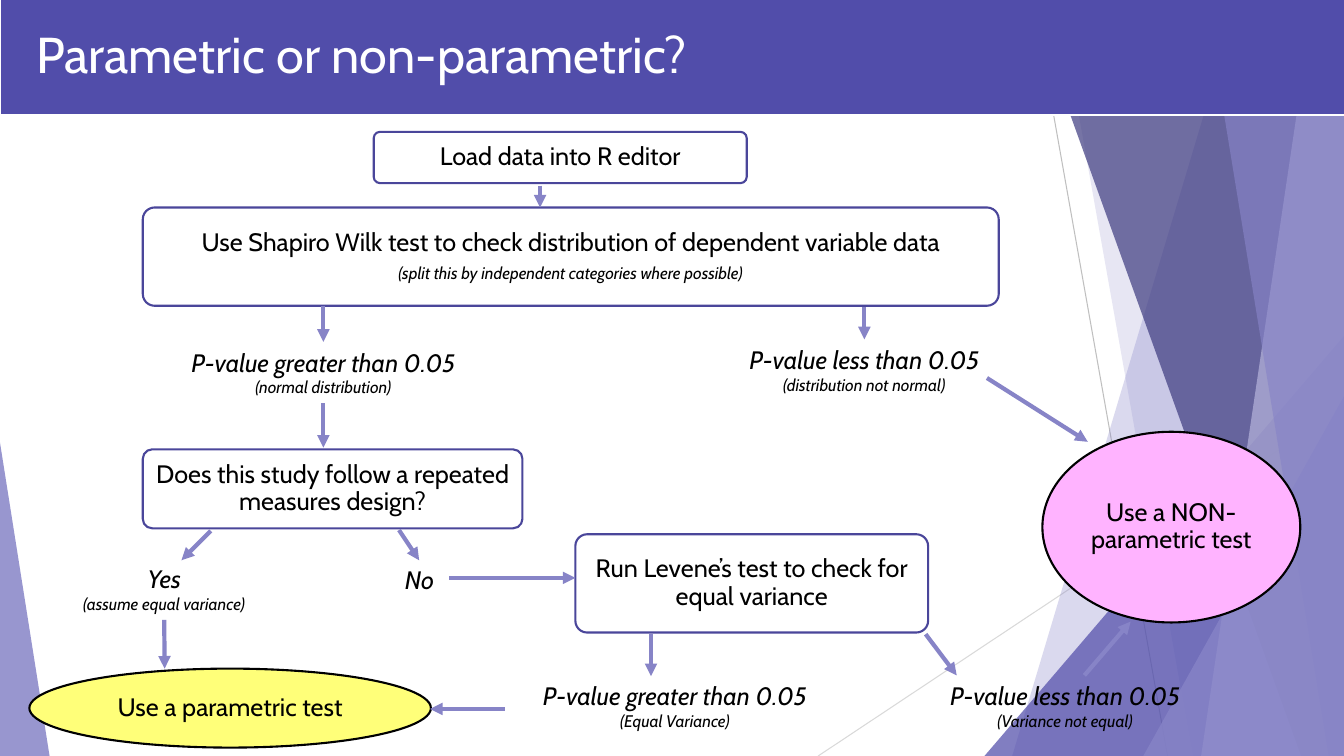
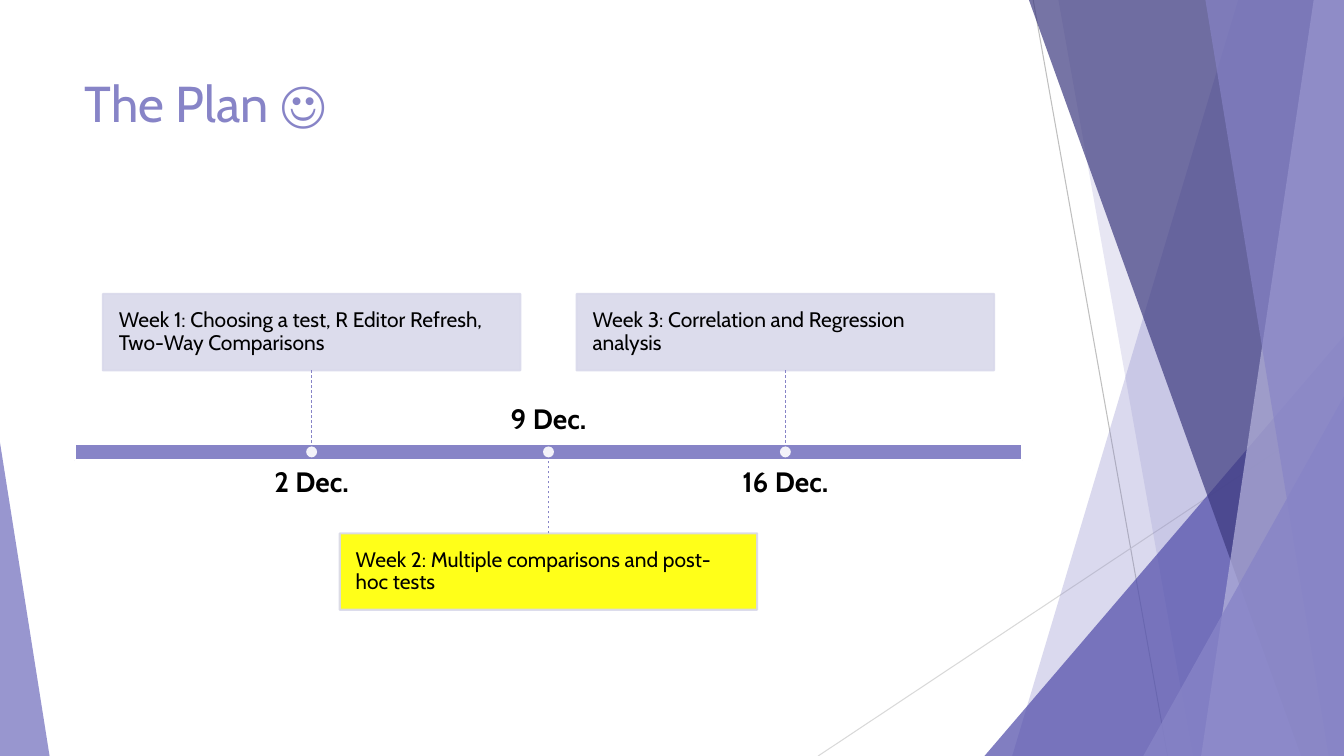
"""Builds a test-choosing flowchart slide and a three-week plan slide on a shared faceted backdrop."""

from dataclasses import dataclass
from typing import Any, NamedTuple, Optional, Sequence, Union

import lxml.etree
import pptx
import pptx.dml.color
import pptx.enum.dml
import pptx.enum.shapes
import pptx.enum.text
import pptx.oxml.ns
import pptx.util

COLUMNS, ROWS = 160, 90
CELL = pptx.util.Inches(1) // 12

LILAC, INDIGO, OUTLINE = "8784C7", "514DAA", "4A469A"
PALE, WHITE, BLACK = "D9D9EB", "FFFFFF", "000000"

SHAPES = pptx.enum.shapes.MSO_SHAPE
ANCHOR = pptx.enum.text.MSO_ANCHOR
ALIGN = pptx.enum.text.PP_ALIGN
DASH = pptx.enum.dml.MSO_LINE.DASH
TOP, BOTTOM = 0, 2

CENTRED = {"alignment": ALIGN.CENTER}
TIGHT = {"line_spacing": 0.9, "space_after": pptx.util.Pt(6)}
MARGINS = ("margin_left", "margin_top", "margin_right", "margin_bottom")


class Area(NamedTuple):
    left: float
    top: float
    width: float
    height: float


class Line(NamedTuple):
    text: str
    size: float
    colour: str = BLACK
    bold: bool = False
    italic: bool = False


@dataclass(frozen=True)
class Panel:
    top_column: float
    bottom_column: float
    colour: str
    opacity: int


@dataclass(frozen=True)
class Spike:
    left: float
    top: float
    width: float
    apex: float
    colour: str
    opacity: int


@dataclass(frozen=True)
class Step:
    area: Area
    lines: Sequence[Line]
    preset: Any = SHAPES.ROUNDED_RECTANGLE
    fill: str = WHITE
    outline: str = OUTLINE


@dataclass(frozen=True)
class Answer:
    area: Area
    text: str
    detail: str = ""


@dataclass(frozen=True)
class Arrow:
    start: tuple[float, float]
    end: tuple[float, float]
    leaves: Optional[str] = None
    reaches: Optional[str] = None


@dataclass(frozen=True)
class Week:
    date: str
    topic: str
    above: bool
    fill: str = PALE


FACETS: list[Union[Panel, Spike]] = [
    Panel(147.4, 120.5, LILAC, 30),
    Panel(126, 142, LILAC, 20),
    Spike(117.2, 40, 42.8, 1, INDIGO, 72),
    Panel(122.5, 154.9, "3D3A7F", 70),
    Panel(156.4, 143, "B7B5DD", 70),
    Panel(143.5, 158.2, LILAC, 65),
    Spike(136.1, 47.2, 23.9, 1, LILAC, 80),
    Spike(0, 52.7, 5.9, 0, LILAC, 85),
]

STEPS = [
    Step(Area(44.5, 15.7, 44.4, 6.1), [Line("Load data into R editor", 18)]),
    Step(Area(17, 24.7, 101.9, 11.7), [
        Line("Use Shapiro Wilk test to check distribution of dependent variable data", 18),
        Line("(split this by independent categories where possible)", 12, italic=True)]),
    Step(Area(17, 53.5, 45.2, 9.4), [Line("Does this study follow a repeated measures design?", 18)]),
    Step(Area(68.5, 63.6, 42, 11.7), [Line("Run Levene’s test to check for equal variance", 18)]),
    Step(Area(3.5, 79.6, 47.8, 9.4), [Line("Use a parametric test", 18)], SHAPES.OVAL, "FFFF79", BLACK),
    Step(Area(124.1, 51.4, 30.7, 22.7), [Line("Use a NON- parametric test", 18)], SHAPES.OVAL, "FFB3FF", BLACK),
]

ANSWERS = {
    "not normal": Answer(Area(83.5, 40.4, 38.8, 7.3), "P-value less than 0.05", "(distribution not normal)"),
    "normal": Answer(Area(17.5, 40.7, 42, 7.3), "P-value greater than 0.05", "(normal distribution)"),
    "unequal": Answer(Area(107.4, 80.4, 38.8, 7.3), "P-value less than 0.05", "(Variance not equal)"),
    "equal": Answer(Area(61.1, 80.4, 38.5, 7.3), "P-value greater than 0.05", "(Equal Variance)"),
    "yes": Answer(Area(6.7, 66.5, 25.7, 7.3), "Yes", "(assume equal variance)"),
    "no": Answer(Area(37.1, 66.6, 25.7, 4.8), "No"),
}

ARROWS = [
    Arrow((64.3, 22.1), (64.3, 24.7)),
    Arrow((38.5, 36.4), (38.5, 40.7), reaches="normal"),
    Arrow((102.9, 36.6), (102.9, 40.4), reaches="not normal"),
    Arrow((117.5, 45), (129.5, 52.6)),
    Arrow((38.5, 48), (38.5, 53.3), leaves="normal"),
    Arrow((19.6, 73.8), (19.6, 79.6), leaves="yes"),
    Arrow((25.1, 63.2), (21.6, 66.7)),
    Arrow((47.5, 63.1), (49.9, 66.7)),
    Arrow((53.5, 68.8), (68.5, 68.8)),
    Arrow((129.1, 80.4), (134.6, 74)),
    Arrow((60.1, 84.4), (51.2, 84.4)),
    Arrow((77.5, 75.5), (77.5, 80.5)),
    Arrow((110.2, 75.5), (113.9, 80.4)),
]

WEEKS = [
    Week("2 Dec.", "Week 1: Choosing a test, R Editor Refresh, Two-Way Comparisons", True),
    Week("9 Dec.", "Week 2: Multiple comparisons and post-hoc tests", False, "FFFF00"),
    Week("16 Dec.", "Week 3: Correlation and Regression analysis", True),
]


def cells(*lengths: float) -> list[int]:
    return [round(length * CELL) for length in lengths]


def rgb(colour: str) -> pptx.dml.color.RGBColor:
    return pptx.dml.color.RGBColor.from_string(colour)


def apply(target: Any, values: dict[str, Any]) -> None:
    for name, value in values.items():
        setattr(target, name, value)


def paint(shape: Any, fill: str, outline: Optional[str] = None, weight: float = 1.5, opacity: int = 100) -> None:
    shape.shadow.inherit = False
    shape.fill.solid()
    shape.fill.fore_color.rgb = rgb(fill)
    if outline:
        shape.line.color.rgb = rgb(outline)
        shape.line.width = pptx.util.Pt(weight)
    else:
        shape.line.fill.background()
    if opacity < 100:
        for tint in shape.element.spPr.iter(pptx.oxml.ns.qn("a:srgbClr")):
            lxml.etree.SubElement(tint, pptx.oxml.ns.qn("a:alpha"), val=str(opacity * 1000))


def write(frame: Any, lines: Sequence[Line], layout: dict[str, Any], spacing: dict[str, Any]) -> None:
    apply(frame, {"word_wrap": True, "auto_size": pptx.enum.text.MSO_AUTO_SIZE.NONE, **layout})
    for number, line in enumerate(lines):
        paragraph = frame.add_paragraph() if number else frame.paragraphs[0]
        apply(paragraph, spacing)
        run = paragraph.add_run()
        run.text = line.text
        apply(run.font, {"name": "Cabin", "size": pptx.util.Pt(line.size),
                         "bold": line.bold, "italic": line.italic})
        run.font.color.rgb = rgb(line.colour)


def padding(length: float) -> dict[str, int]:
    return dict.fromkeys(MARGINS, cells(length)[0])


def connect(shapes: Any, start: tuple[float, float], end: tuple[float, float], colour: str,
            weight: float, arrow: bool = False, dash: Any = None) -> Any:
    link = shapes.add_connector(pptx.enum.shapes.MSO_CONNECTOR.STRAIGHT, *cells(*start, *end))
    link.line.color.rgb = rgb(colour)
    apply(link.line, {"width": pptx.util.Pt(weight), "dash_style": dash})
    properties = link.element.spPr
    if arrow:
        stroke = properties.find(pptx.oxml.ns.qn("a:ln"))
        lxml.etree.SubElement(stroke, pptx.oxml.ns.qn("a:tailEnd"), type="triangle")
    lxml.etree.SubElement(properties, pptx.oxml.ns.qn("a:effectLst"))
    return link


def move_backdrop_to_layout(slide: Any, layout: Any) -> None:
    backdrop = slide.shapes.add_group_shape()
    connect(backdrop.shapes, (123, 0), (139, ROWS), "BFBFBF", 0.75)
    connect(backdrop.shapes, (COLUMNS, 48.4), (97.4, ROWS), "D9D9D9", 0.75)
    for facet in FACETS:
        if isinstance(facet, Panel):
            outline = backdrop.shapes.build_freeform(*cells(facet.top_column, 0))
            corners = [(COLUMNS, 0), (COLUMNS, ROWS), (facet.bottom_column, ROWS)]
            outline.add_line_segments([cells(*corner) for corner in corners], close=True)
            piece = outline.convert_to_shape()
        else:
            piece = backdrop.shapes.add_shape(
                SHAPES.ISOSCELES_TRIANGLE, *cells(facet.left, facet.top, facet.width, ROWS - facet.top))
            piece.adjustments[0] = facet.apex
        paint(piece, facet.colour, opacity=facet.opacity)
    for number, identity in enumerate(backdrop.element.iter(pptx.oxml.ns.qn("p:cNvPr")), 100):
        identity.set("id", str(number))
    layout.shapes.element.append(backdrop.element)


def set_title(slide: Any, text: str, left: float, top: float, colour: str) -> None:
    title = slide.shapes.title
    apply(title, dict(zip(("left", "top", "width", "height"), cells(left, top, 112.8, 17.3))))
    write(title.text_frame, [Line(text, 36, colour)], {"vertical_anchor": ANCHOR.TOP}, {"alignment": ALIGN.LEFT})
    slide.shapes.element.append(title.element)


def draw_flowchart(slide: Any) -> None:
    band = slide.shapes.add_shape(SHAPES.RECTANGLE, *cells(0, -0.2, 160.3, 13.9))
    paint(band, INDIGO, WHITE, 2)
    set_title(slide, "Parametric or non-parametric?", 3.1, 2.2, WHITE)
    for step in STEPS:
        box = slide.shapes.add_shape(step.preset, *cells(*step.area))
        if step.preset == SHAPES.ROUNDED_RECTANGLE:
            box.adjustments[0] = 0.12
        paint(box, step.fill, step.outline)
        write(box.text_frame, step.lines, {"vertical_anchor": ANCHOR.MIDDLE, **padding(0.7)}, CENTRED | TIGHT)
    labels = {}
    for name, answer in ANSWERS.items():
        labels[name] = slide.shapes.add_textbox(*cells(*answer.area))
        lines = [Line(answer.text, 18, italic=True)]
        if answer.detail:
            lines.append(Line(answer.detail, 12, italic=True))
        write(labels[name].text_frame, lines, {}, CENTRED)
    for arrow in ARROWS:
        link = connect(slide.shapes, arrow.start, arrow.end, LILAC, 3, arrow=True)
        if arrow.leaves:
            link.begin_connect(labels[arrow.leaves], BOTTOM)
        if arrow.reaches:
            link.end_connect(labels[arrow.reaches], TOP)


def draw_plan(slide: Any) -> None:
    set_title(slide, "The Plan ☺", 8.9, 8, LILAC)
    track = Area(8.9, 52.8, 112.8, 2)
    card_width, card_height, stem = 49.7, 9.1, 8.7
    date_width, date_height, date_gap, dot = 45.1, 5.8, 0.9, 1.3
    floor = track.top + track.height
    bar = slide.shapes.add_shape(SHAPES.RECTANGLE, *cells(*track))
    paint(bar, LILAC, WHITE)
    for number, week in enumerate(WEEKS, 1):
        share = number / (len(WEEKS) + 1)
        centre = track.left + track.width * share
        card_top = track.top - stem - card_height if week.above else floor + stem
        date_top = floor + date_gap if week.above else track.top - date_gap - date_height
        edge = track.top if week.above else floor

        card = slide.shapes.add_shape(
            SHAPES.RECTANGLE, *cells(centre - card_width / 2, card_top, card_width, card_height))
        paint(card, week.fill, PALE, opacity=90)
        write(card.text_frame, [Line(week.topic, 15)], {"vertical_anchor": ANCHOR.MIDDLE, **padding(1.9)},
              {"alignment": ALIGN.LEFT, **TIGHT})

        date = slide.shapes.add_textbox(*cells(centre - date_width / 2, date_top, date_width, date_height))
        anchor = ANCHOR.TOP if week.above else ANCHOR.BOTTOM
        write(date.text_frame, [Line(week.date, 20, bold=True)],
              {"vertical_anchor": anchor, **padding(0)}, CENTRED | TIGHT)

        link = connect(slide.shapes, (centre, card_top), (centre, edge), LILAC, 0.5, dash=DASH)
        link.begin_connect(card, BOTTOM if week.above else TOP)
        if share == 0.5:
            link.end_connect(bar, TOP if week.above else BOTTOM)

        marker = slide.shapes.add_shape(
            SHAPES.OVAL, *cells(centre - dot / 2, track.top + (track.height - dot) / 2, dot, dot))
        paint(marker, WHITE, opacity=90)


def main() -> None:
    deck = pptx.Presentation()
    apply(deck, dict(zip(("slide_width", "slide_height"), cells(COLUMNS, ROWS))))
    layout = deck.slide_layouts[5]
    flowchart, plan = (deck.slides.add_slide(layout) for _ in range(2))
    move_backdrop_to_layout(flowchart, layout)
    draw_flowchart(flowchart)
    draw_plan(plan)
    deck.save("out.pptx")


if __name__ == "__main__":
    main()
